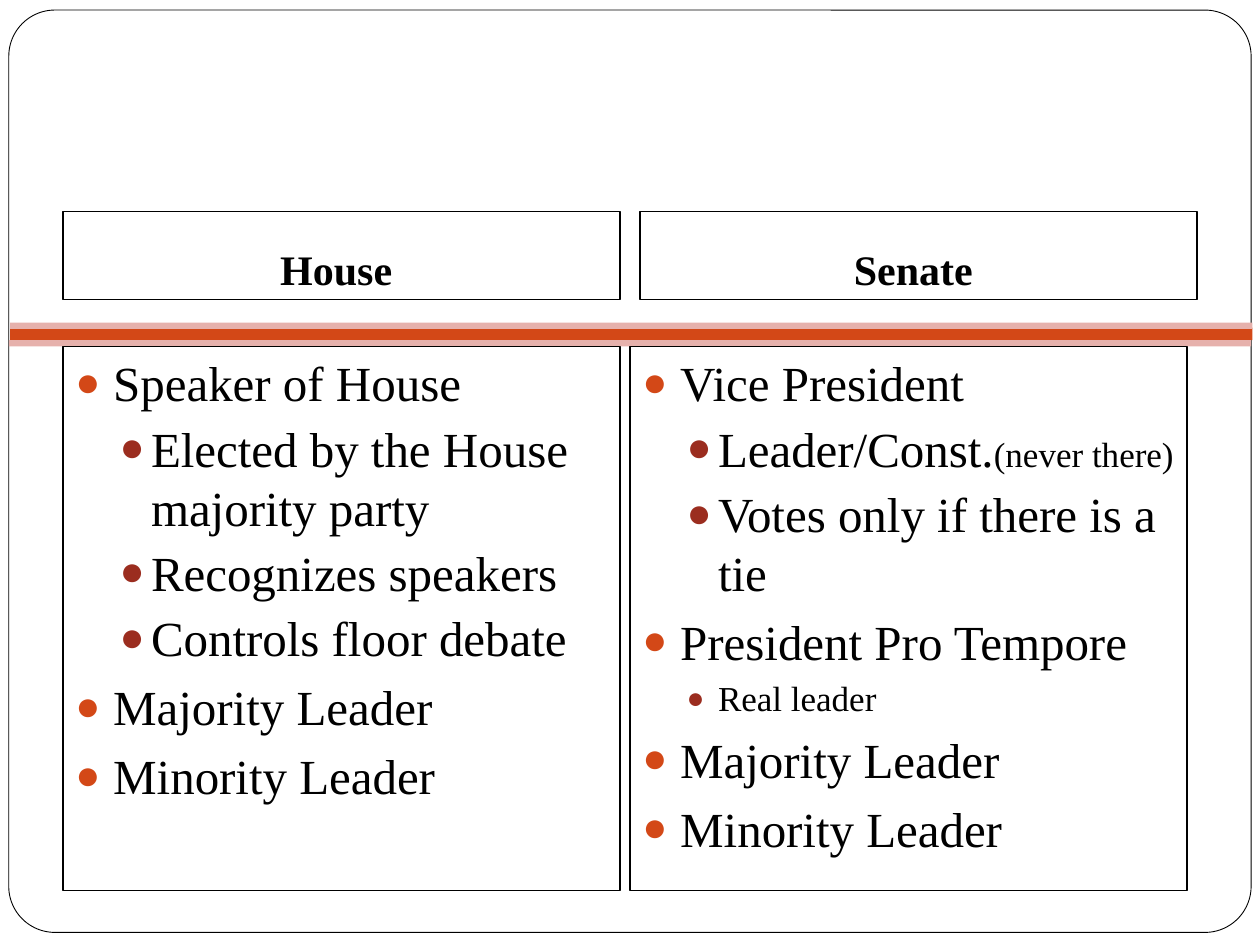
from lxml import etree
from pptx import Presentation
from pptx.dml.color import RGBColor
from pptx.enum.shapes import MSO_SHAPE as Shape
from pptx.enum.text import MSO_ANCHOR as Anchor, PP_ALIGN as Align
from pptx.oxml.ns import qn
from pptx.util import Inches, Pt

FONT = "Times New Roman"
COLORS = {"white": "FFFFFF", "black": "000000", "band": "D34817",
          "edge": "E6B1AC", "sub": "9B2D1F"}
BANDS = [(0.08, 2.6, 0.1, "band"), (0.08, 2.56, 0.05, "edge"),
         (0.07, 2.7, 0.05, "edge")]
CHAMBERS = [
    {"title": "House ", "title_left": 0.5, "left": 0.5, "items": [
        (0, [("Speaker of House", 28)]),
        (1, [("Elected by the House majority party", 28)]),
        (1, [("Recognizes speakers", 28)]),
        (1, [("Controls floor debate", 28)]),
        (0, [("Majority Leader", 28)]),
        (0, [("Minority Leader", 28)])]},
    {"title": "Senate ", "title_left": 5.08, "left": 5, "items": [
        (0, [("Vice President", 28)]),
        (1, [("Leader/Const.", 28), ("(never there)", 20)]),
        (1, [("Votes only if there is a tie", 28)]),
        (0, [("President Pro Tempore", 28)]),
        (1, [("Real leader", 20)]),
        (0, [("Majority Leader", 28)]),
        (0, [("Minority Leader", 28)])]},
]
LEVELS = [{"margin": 0.3, "indent": -0.3, "before": 5.8, "color": "band"},
          {"margin": 0.6, "indent": -0.25, "before": 3.8, "color": "sub"}]


def rgb(name):
    return RGBColor.from_string(COLORS[name])


def add_box(s, kind, left, top, width, height, fill=None, line=None):
    sp = s.shapes.add_shape(kind, Inches(left), Inches(top),
                            Inches(width), Inches(height))
    sp.shadow.inherit = False
    if fill:
        sp.fill.solid()
        sp.fill.fore_color.rgb = rgb(fill)
    else:
        sp.fill.background()
    if line:
        sp.line.color.rgb = rgb("black")
        sp.line.width = Pt(line)
    else:
        sp.line.fill.background()
    return sp


def add_run(p, text, size, bold=False):
    r = p.add_run()
    r.text = text
    r.font.name = FONT
    r.font.size = Pt(size)
    r.font.bold = bold
    r.font.color.rgb = rgb("black")


def add_bullet(p, level):
    style = LEVELS[level]
    pPr = p._p.get_or_add_pPr()
    pPr.set("marL", str(Inches(style["margin"])))
    pPr.set("indent", str(Inches(style["indent"])))
    clr = etree.SubElement(pPr, qn("a:buClr"))
    etree.SubElement(clr, qn("a:srgbClr"), val=COLORS[style["color"]])
    etree.SubElement(pPr, qn("a:buSzPct"), val="85000")
    etree.SubElement(pPr, qn("a:buFont"), typeface=FONT)
    etree.SubElement(pPr, qn("a:buChar"), char="●")
    p.level = level


def add_title(s, text, left):
    tf = add_box(s, Shape.RECTANGLE, left, 1.68, 4.42, 0.7, line=0.75).text_frame
    tf.word_wrap = True
    tf.vertical_anchor = Anchor.BOTTOM
    p = tf.paragraphs[0]
    p.alignment = Align.CENTER
    add_run(p, text, 24, bold=True)


def add_list(s, items, left):
    tf = add_box(s, Shape.RECTANGLE, left, 2.75, 4.42, 4.32, line=0.75).text_frame
    tf.word_wrap = True
    tf.vertical_anchor = Anchor.TOP
    for i, (level, runs) in enumerate(items):
        p = tf.add_paragraph() if i else tf.paragraphs[0]
        add_bullet(p, level)
        p.alignment = Align.LEFT
        if i:
            p.space_before = Pt(LEVELS[level]["before"])
        for text, size in runs:
            add_run(p, text, size)


def main():
    prs = Presentation()
    prs.slide_width, prs.slide_height = Inches(10), Inches(7.5)
    s = prs.slides.add_slide(prs.slide_layouts[6])
    frame = add_box(s, Shape.ROUNDED_RECTANGLE, 0.07, 0.08, 9.86, 7.32,
                    "white", 0.5)
    frame.adjustments[0] = 0.05
    for left, top, height, color in BANDS:
        add_box(s, Shape.RECTANGLE, left, top, 9.86, height, color)
    for chamber in CHAMBERS:
        add_title(s, chamber["title"], chamber["title_left"])
        add_list(s, chamber["items"], chamber["left"])
    prs.save("out.pptx")


if __name__ == "__main__":
    main()
